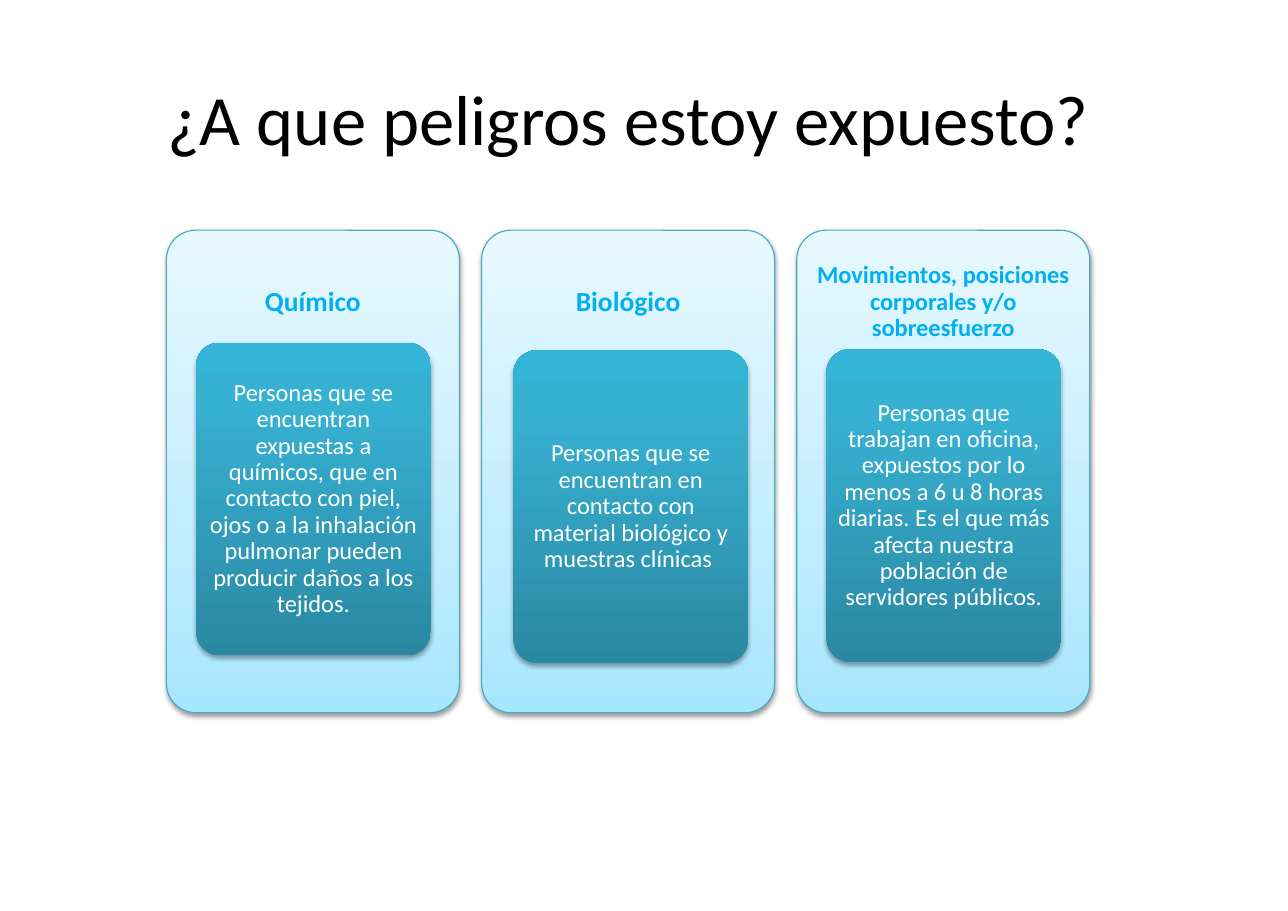
from lxml.etree import SubElement
from pptx import Presentation
from pptx.dml.color import RGBColor
from pptx.enum.shapes import MSO_SHAPE
from pptx.enum.text import MSO_ANCHOR, MSO_AUTO_SIZE, PP_ALIGN
from pptx.oxml.ns import qn
from pptx.util import Inches, Pt

COLOURS = {
    "title": "000000",
    "heading": "00B0F0",
    "body": "FFFFFF",
    "outline": "46AAC5",
    "shadow": "000000",
}
# Gradient stops from bottom to top: percent and colour
PANEL_GRADIENT = [(0, "A7E6FF"), (35, "C1EDFF"), (100, "E7F8FF")]
CARD_GRADIENT = [(0, "2A88A2"), (80, "37B1D2"), (100, "34B4D6")]

# Shares of the slide, in percent of its width or height
FIRST_LEFT, COLUMN_STEP = 12.92, 24.47
PANEL_TOP, PANEL_WIDTH, PANEL_HEIGHT = 25.27, 22.75, 52.96
HEADING_HEIGHT = 15.84
CARD_WIDTH, CARD_HEIGHT = 18.22, 34.34

# Heading, heading size, card indent, card top, card text
HAZARDS = [
    ("Químico", 18, 2.31, 37.61,
     "Personas que se encuentran expuestas a químicos, que en contacto con piel, "
     "ojos o a la inhalación pulmonar pueden producir daños a los tejidos."),
    ("Biológico", 18, 2.48, 38.45,
     "Personas que se encuentran en contacto con material biológico y "
     "muestras clínicas "),
    ("Movimientos, posiciones corporales y/o sobreesfuerzo", 16, 2.31, 38.33,
     "Personas que trabajan en oficina, expuestos por lo menos a 6 u 8 horas "
     "diarias. Es el que más afecta nuestra población de servidores públicos."),
]


class HazardSlide:
    font = "Calibri"

    def __init__(self, deck):
        self.deck = deck
        self.page = deck.slides.add_slide(deck.slide_layouts[5])

    def place(self, left, top, width, height):
        """Turn percent shares into slide lengths."""
        across, down = self.deck.slide_width, self.deck.slide_height
        return [int(share * full / 100) for share, full in
                zip((left, top, width, height), (across, down, across, down))]

    def add_text(self, box, text, size, colour, bold=False, spacing=0.9, insets=(0.1, 0.05)):
        frame = box.text_frame
        frame.word_wrap = True
        frame.auto_size = MSO_AUTO_SIZE.NONE
        frame.vertical_anchor = MSO_ANCHOR.MIDDLE
        frame.margin_left = frame.margin_right = Inches(insets[0])
        frame.margin_top = frame.margin_bottom = Inches(insets[1])
        para = frame.paragraphs[0]
        para.alignment = PP_ALIGN.CENTER
        para.line_spacing = spacing
        span = para.add_run()
        span.text = text
        span.font.name = self.font
        span.font.size = Pt(size)
        span.font.bold = bold
        span.font.color.rgb = RGBColor.from_string(COLOURS[colour])

    def title(self, text, *area):
        box = self.page.shapes.title
        box.left, box.top, box.width, box.height = self.place(*area)
        self.add_text(box, text, 46.2, "title", spacing=1.0)

    def heading(self, text, size, *area):
        box = self.page.shapes.add_textbox(*self.place(*area))
        self.add_text(box, text, size, "heading", bold=True, insets=(0.07, 0.07))

    def rounded(self, stops, shadow_alpha, shadow_distance, *area):
        box = self.page.shapes.add_shape(MSO_SHAPE.ROUNDED_RECTANGLE, *self.place(*area))
        box.adjustments[0] = 0.1
        self.shade(box, stops)
        box.line.fill.background()
        self.cast_shadow(box, shadow_alpha, shadow_distance)
        return box

    def shade(self, box, stops):
        box.fill.gradient()
        box.fill.gradient_angle = 90
        stop_list = box.element.spPr.find(".//" + qn("a:gsLst"))
        for stop in list(stop_list):
            stop_list.remove(stop)
        for percent, colour in stops:
            stop = SubElement(stop_list, qn("a:gs"), pos=str(percent * 1000))
            SubElement(stop, qn("a:srgbClr"), val=colour)

    def cast_shadow(self, box, alpha, distance):
        box.shadow.inherit = False
        effects = box.element.spPr.find(qn("a:effectLst"))
        shadow = SubElement(effects, qn("a:outerShdw"), blurRad=str(Pt(3.1)),
                            dist=str(Pt(distance)), dir="5400000", rotWithShape="0")
        colour = SubElement(shadow, qn("a:srgbClr"), val=COLOURS["shadow"])
        SubElement(colour, qn("a:alpha"), val=str(alpha * 1000))

    def panel(self, *area):
        box = self.rounded(PANEL_GRADIENT, 38, 1.6, *area)
        box.line.color.rgb = RGBColor.from_string(COLOURS["outline"])
        box.line.width = Pt(0.75)

    def card(self, text, *area):
        box = self.rounded(CARD_GRADIENT, 35, 1.8, *area)
        self.add_text(box, text, 16, "body", insets=(0.04, 0.03))


def main():
    deck = Presentation()
    deck.slide_width, deck.slide_height = Inches(11.69), Inches(8.27)
    slide = HazardSlide(deck)

    # Title
    slide.title("¿A que peligros estoy expuesto?", 10.27, 7.13, 76.99, 11.37)

    # One panel with heading and card per hazard
    for column, (heading, size, indent, card_top, text) in enumerate(HAZARDS):
        left = FIRST_LEFT + column * COLUMN_STEP
        slide.panel(left, PANEL_TOP, PANEL_WIDTH, PANEL_HEIGHT)
        slide.heading(heading, size, left, PANEL_TOP, PANEL_WIDTH, HEADING_HEIGHT)
        slide.card(text, left + indent, card_top, CARD_WIDTH, CARD_HEIGHT)

    deck.save("out.pptx")


if __name__ == "__main__":
    main()
